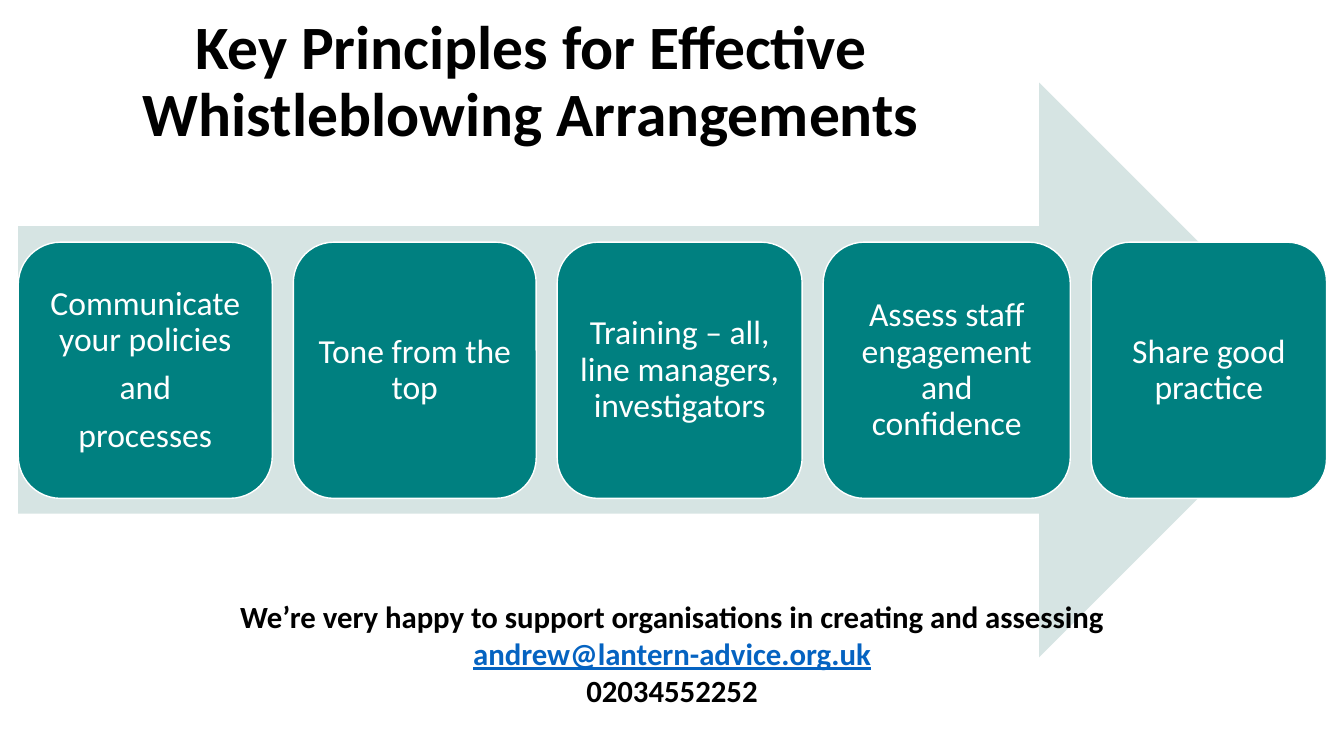
import pptx
import pptx.dml.color
import pptx.enum.shapes
import pptx.enum.text
import pptx.util

Pt = pptx.util.Pt
RGBColor = pptx.dml.color.RGBColor
MSO_SHAPE = pptx.enum.shapes.MSO_SHAPE
MSO_ANCHOR = pptx.enum.text.MSO_ANCHOR
PP_ALIGN = pptx.enum.text.PP_ALIGN

BLACK = RGBColor(0x00, 0x00, 0x00)
WHITE = RGBColor(0xFF, 0xFF, 0xFF)
TEAL = RGBColor(0x00, 0x80, 0x80)
PALE_TEAL = RGBColor(0xD6, 0xE4, 0xE3)
LINK_BLUE = RGBColor(0x05, 0x63, 0xC1)

FONT = "Calibri"
LEFT = 13
CARD_TOP, CARD_HEIGHT, CARD_GAP = 173, 183, 15
PRINCIPLES = [
    (181.5, ["Communicate your policies", "and", "processes"]),
    (173.5, ["Tone from the top"]),
    (175, ["Training – all, line managers, investigators"]),
    (176.5, ["Assess staff engagement and confidence"]),
    (168, ["Share good practice"]),
]
CONTACT = [
    ("We’re very happy to support organisations in creating and assessing", {}),
    ("andrew@lantern-advice.org.uk", {"color": LINK_BLUE, "underline": True}),
    ("02034552252", {}),
]


def write(p, text, size, color=BLACK, bold=False, underline=False,
          line_spacing=1.0, space_after=0):
    p.alignment = PP_ALIGN.CENTER
    p.line_spacing = line_spacing
    p.space_before = Pt(0)
    p.space_after = Pt(space_after)
    r = p.add_run()
    r.text = text
    r.font.name = FONT
    r.font.size = Pt(size)
    r.font.bold = bold
    r.font.underline = underline
    r.font.color.rgb = color


def next_paragraph(tf, index):
    return tf.paragraphs[0] if index == 0 else tf.add_paragraph()


def add_title(s, text):
    sp = s.shapes.title
    sp.left, sp.top, sp.width, sp.height = Pt(17), Pt(7), Pt(725), Pt(104.5)
    tf = sp.text_frame
    tf.word_wrap = True
    tf.auto_size = pptx.enum.text.MSO_AUTO_SIZE.NONE
    tf.vertical_anchor = MSO_ANCHOR.MIDDLE
    write(tf.paragraphs[0], text, 44, bold=True, line_spacing=0.9)


def add_shape(s, kind, left, top, width, height, fill, line=None):
    sp = s.shapes.add_shape(kind, Pt(left), Pt(top), Pt(width), Pt(height))
    sp.shadow.inherit = False
    sp.fill.solid()
    sp.fill.fore_color.rgb = fill
    if line is None:
        sp.line.fill.background()
    else:
        sp.line.color.rgb = line
        sp.line.width = Pt(1)
    return sp


def add_card(s, left, width, paragraphs):
    sp = add_shape(s, MSO_SHAPE.ROUNDED_RECTANGLE, left, CARD_TOP, width,
                   CARD_HEIGHT, TEAL, line=WHITE)
    tf = sp.text_frame
    tf.word_wrap = True
    tf.vertical_anchor = MSO_ANCHOR.MIDDLE
    tf.margin_left = tf.margin_right = Pt(7.2)
    tf.margin_top = tf.margin_bottom = Pt(7.2)
    for i, text in enumerate(paragraphs):
        write(next_paragraph(tf, i), text, 24, color=WHITE,
              line_spacing=0.9, space_after=8.4)


def add_contact(s):
    sp = s.shapes.add_textbox(Pt(0), Pt(423.5), Pt(960), Pt(87))
    tf = sp.text_frame
    tf.word_wrap = True
    for i, (text, style) in enumerate(CONTACT):
        write(next_paragraph(tf, i), text, 22, bold=True, **style)


def main():
    prs = pptx.Presentation()
    prs.slide_width, prs.slide_height = Pt(960), Pt(540)
    s = prs.slides.add_slide(prs.slide_layouts[5])
    add_title(s, "Key Principles for Effective Whistleblowing Arrangements")
    add_shape(s, MSO_SHAPE.RIGHT_ARROW, LEFT, 59, 934.5, 410.5, PALE_TEAL)
    left = LEFT
    for width, paragraphs in PRINCIPLES:
        add_card(s, left, width, paragraphs)
        left += width + CARD_GAP
    add_contact(s)
    prs.save("out.pptx")


if __name__ == "__main__":
    main()
